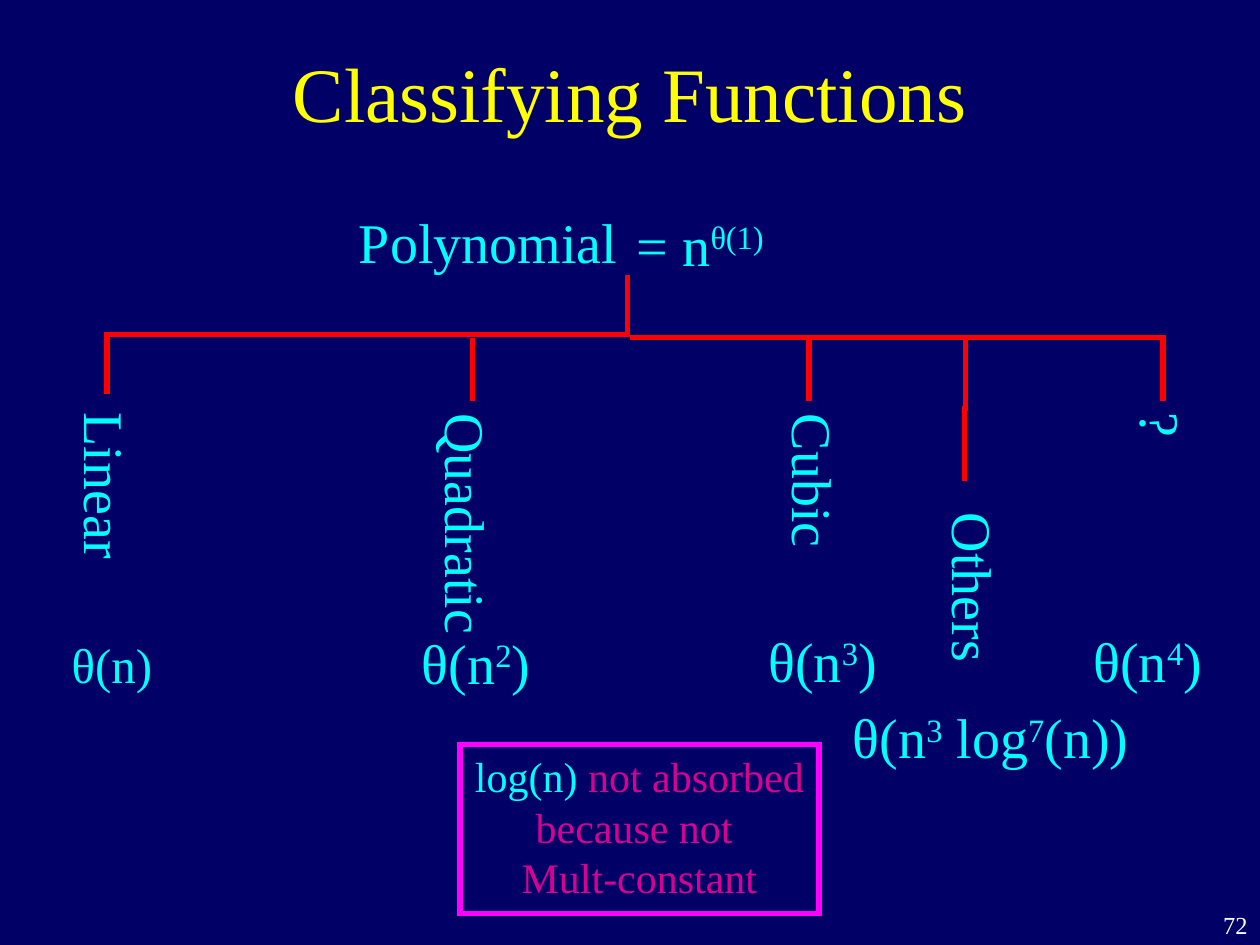
from lxml import etree
from pptx import Presentation
from pptx.dml.color import RGBColor
from pptx.enum.shapes import MSO_CONNECTOR, MSO_SHAPE
from pptx.enum.text import MSO_ANCHOR, MSO_AUTO_SIZE, PP_ALIGN
from pptx.oxml.ns import qn
from pptx.util import Inches, Pt

STRAIGHT, ELBOW = MSO_CONNECTOR.STRAIGHT, MSO_CONNECTOR.ELBOW
RECT = MSO_SHAPE.RECTANGLE
TOP, MIDDLE = MSO_ANCHOR.TOP, MSO_ANCHOR.MIDDLE
GROW = MSO_AUTO_SIZE.SHAPE_TO_FIT_TEXT
LEFT, CENTER, RIGHT = PP_ALIGN.LEFT, PP_ALIGN.CENTER, PP_ALIGN.RIGHT
CYAN, PINK, RED = "00FFFF", "D60093", "FF0000"


def color(code):
    return RGBColor.from_string(code)


def style(run, size, code):
    run.font.name = "Times New Roman"
    run.font.size = Pt(size)
    run.font.color.rgb = color(code)


deck = Presentation()
deck.slide_width, deck.slide_height = Inches(10), Inches(7.5)
slide = deck.slides.add_slide(deck.slide_layouts[5])
slide.background.fill.solid()
slide.background.fill.fore_color.rgb = color("000066")
shapes = slide.shapes

title = shapes.title
title.left, title.top = Inches(0.75), Inches(0.1)
title.width, title.height = Inches(8.5), Inches(1.25)
title.text_frame.text = "Classifying Functions"
title.text_frame.vertical_anchor = MIDDLE
title.text_frame.paragraphs[0].alignment = CENTER
style(title.text_frame.paragraphs[0].runs[0], 44, "FFFF00")

labels = [
    ("Linear", -0.15, 3.86, 2, 0.63, 90, 32, LEFT, CYAN),
    ("Quadratic", 2.69, 3.89, 2.05, 0.63, 90, 32, LEFT, CYAN),
    ("Cubic", 5.84, 3.5, 1.26, 0.63, 90, 32, LEFT, CYAN),
    ("Others", 7.04, 4.35, 1.39, 0.63, 90, 32, LEFT, CYAN),
    ("?", 9.03, 3.06, 0.4, 0.63, 90, 32, LEFT, CYAN),
    ("θ(n)", 0.47, 4.99, 0.84, 0.57, 0, 28, LEFT, CYAN),
    ("θ(n^2^)", 3.25, 4.94, 1.08, 0.63, 0, 32, LEFT, CYAN),
    ("θ(n^3^)", 6, 4.92, 1.08, 0.63, 0, 32, LEFT, CYAN),
    ("θ(n^3^ log^7^(n))", 6.67, 5.53, 2.42, 0.63, 0, 32, LEFT, CYAN),
    ("θ(n^4^)", 8.58, 4.92, 1.08, 0.63, 0, 32, LEFT, CYAN),
    ("Polynomial", 2.75, 1.6, 2.25, 0.63, 0, 32, LEFT, CYAN),
    ("= n^θ(1)", 4.9, 1.62, 1.26, 0.63, 0, 32, RIGHT, CYAN),
    ("72", 9.5, 7.17, 0.5, 0.33, 0, 14, RIGHT, "FFFFFF"),
]
for text, x, y, w, h, turn, size, align, code in labels:
    box = shapes.add_textbox(Inches(x), Inches(y), Inches(w), Inches(h))
    box.rotation = turn
    frame = box.text_frame
    frame.word_wrap = text in ("Linear", "72")
    frame.auto_size = GROW
    para = frame.paragraphs[0]
    para.alignment = align
    for i, part in enumerate(text.split("^")):
        run = para.add_run()
        run.text = part
        style(run, size, code)
        if i % 2:
            run._r.get_or_add_rPr().set("baseline", "30000")

links = [
    (ELBOW, "bentConnector3", 2.44, 0.59, 3.39, 4.72, 270),
    (ELBOW, "bentConnector2", 5, 2.68, 9.23, 3.18, 0),
    (ELBOW, "bentConnector3", 7.09, 3.24, 8.23, 3.25, 270),
    (STRAIGHT, "line", 3.75, 3.18, 3.75, 2.68, 0),
    (STRAIGHT, "line", 6.42, 3.18, 6.42, 2.68, 0),
]
lines = []
for kind, form, x1, y1, x2, y2, turn in links:
    link = shapes.add_connector(kind, Inches(x1), Inches(y1), Inches(x2), Inches(y2))
    lines.append((link.line, RED))
    props = link._element.spPr
    props.find(qn("a:prstGeom")).set("prst", form)
    props.find(qn("a:xfrm")).set("rot", str(turn * 60000))

note = shapes.add_shape(RECT, Inches(3.65), Inches(5.91), Inches(2.85), Inches(1.34))
note.shadow.inherit = False
note.fill.background()
lines.append((note.line, "FF00FF"))
frame = note.text_frame
frame.word_wrap = False
frame.auto_size = GROW
frame.vertical_anchor = TOP
para = frame.paragraphs[0]
para.text = "log(n)"
for i, text in enumerate([" not absorbed", "because not "]):
    if i:
        para.add_line_break()
    para.add_run().text = text
last = frame.add_paragraph()
last.text = "Mult-constant"
for para in frame.paragraphs:
    para.alignment = CENTER
    for run in para.runs:
        style(run, 24, CYAN if run.text == "log(n)" else PINK)

for line, code in lines:
    line.color.rgb = color(code)
    line.width = Pt(3)
    edge = line._get_or_add_ln()
    etree.SubElement(edge, qn("a:miter")).set("lim", "800000")
    props = edge.getparent()
    if props.find(qn("a:effectLst")) is None:
        etree.SubElement(props, qn("a:effectLst"))

deck.save("out.pptx")
